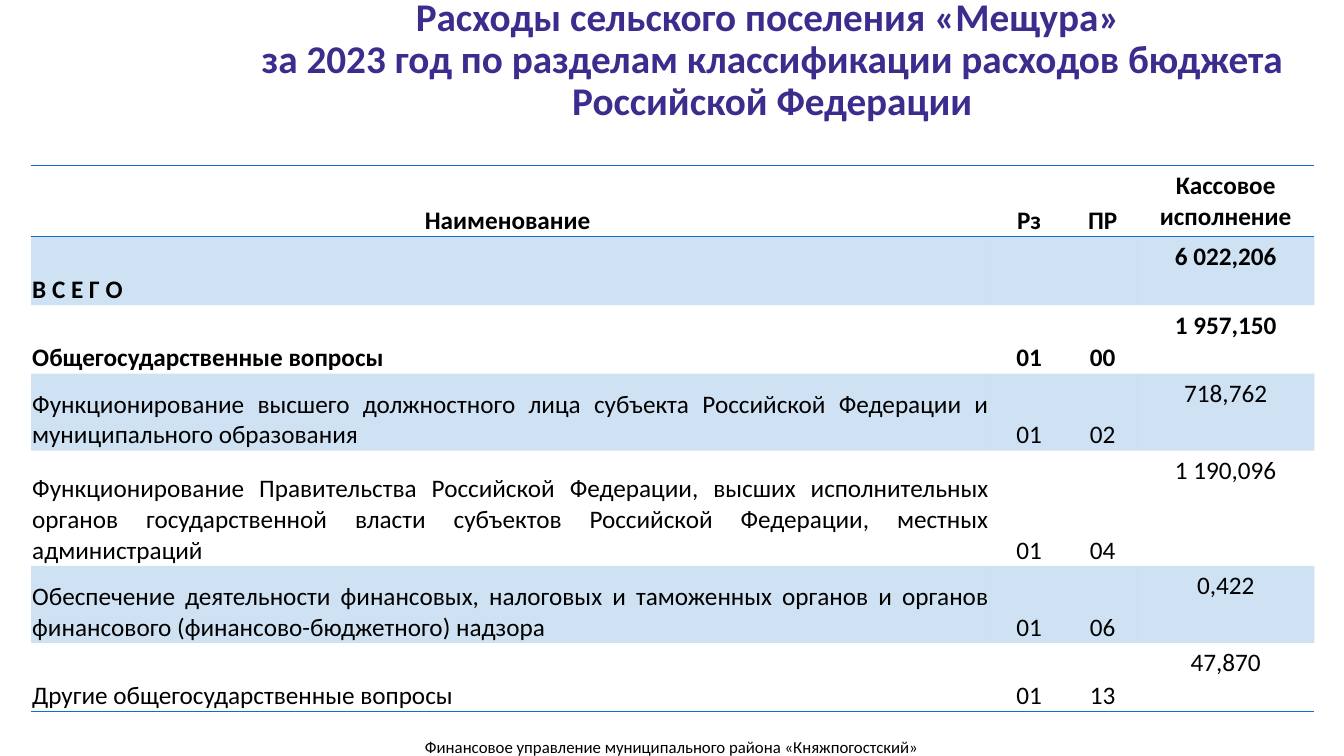
from lxml import etree
from pptx import Presentation
from pptx.dml.color import RGBColor
from pptx.enum.text import MSO_ANCHOR, PP_ALIGN
from pptx.oxml.ns import qn
from pptx.util import Pt

LEFT, CENTER, JUSTIFY = PP_ALIGN.LEFT, PP_ALIGN.CENTER, PP_ALIGN.JUSTIFY
TOP, MIDDLE, BOTTOM = MSO_ANCHOR.TOP, MSO_ANCHOR.MIDDLE, MSO_ANCHOR.BOTTOM

PURPLE = RGBColor(0x3C, 0x2C, 0x8E)
BLUE = RGBColor(0x0F, 0x6F, 0xC6)
BLACK = RGBColor(0, 0, 0)
FONT = "Calibri"
PLAIN_TABLE_STYLE = "{2D5ABB26-0587-4C30-8999-92F81FD0307C}"

TITLE = ("Расходы сельского поселения «Мещура» \v"
         "за 2023 год по разделам классификации расходов бюджета Российской Федерации")
FOOTER = "Финансовое управление муниципального района «Княжпогостский»"
COLUMN_WIDTHS = [684.7, 56.2, 49, 126.7]
ROW_HEIGHTS = [49.7, 49, 49, 55, 82.4, 55, 49]
BOLD_ROWS = 3
EXPENSES = [
    ["Наименование ", "Рз", "ПР", "Кассовое исполнение"],
    ["В С Е Г О", "", "", "6 022,206"],
    ["Общегосударственные вопросы", "01", "00", "1 957,150"],
    ["Функционирование высшего должностного лица субъекта Российской Федерации "
     "и муниципального образования", "01", "02", "718,762"],
    ["Функционирование Правительства Российской Федерации, высших исполнительных "
     "органов государственной власти субъектов Российской Федерации, местных "
     "администраций", "01", "04", "1 190,096"],
    ["Обеспечение деятельности финансовых, налоговых и таможенных органов и органов "
     "финансового (финансово-бюджетного) надзора", "01", "06", "0,422"],
    ["Другие общегосударственные вопросы", "01", "13", "47,870"],
]


def write(frame, text, size=18, color=BLACK, bold=False, align=CENTER, spacing=None):
    para = frame.paragraphs[0]
    para.text = text
    para.alignment = align
    para.line_spacing = spacing
    for span in para.runs:
        span.font.name = FONT
        span.font.size = Pt(size)
        span.font.bold = bold
        span.font.color.rgb = color


def tint(cell, color, percent):
    """Fill a cell with a colour at the given opacity."""
    cell.fill.solid()
    cell.fill.fore_color.rgb = color
    color_node = cell._tc.tcPr.find(qn("a:solidFill"))[0]
    etree.SubElement(color_node, qn("a:alpha"), val=str(percent * 1000))


def add_border(cell, side):
    """Draw one edge of a cell: lnT or lnB."""
    line = etree.Element(qn("a:" + side), w=str(Pt(1)))
    fill = etree.SubElement(line, qn("a:solidFill"))
    etree.SubElement(fill, qn("a:srgbClr"), val=str(BLUE))
    cell._tc.get_or_add_tcPr().insert(0, line)


class ExpenseSlide:
    def __init__(self, deck):
        self.page = deck.slides.add_slide(deck.slide_layouts[6])

    def text_box(self, left, top, width, height, text, **style):
        box = self.page.shapes.add_textbox(Pt(left), Pt(top), Pt(width), Pt(height))
        frame = box.text_frame
        frame.word_wrap = True
        frame.vertical_anchor = MIDDLE
        write(frame, text, **style)

    def table(self, left, top, widths, heights, rows):
        frame = self.page.shapes.add_table(
            len(rows), len(widths), Pt(left), Pt(top), Pt(sum(widths)), Pt(sum(heights)))
        table = frame.table
        table.first_row = table.horz_banding = False
        table._tbl.tblPr.find(qn("a:tableStyleId")).text = PLAIN_TABLE_STYLE
        for column, width in zip(table.columns, widths):
            column.width = Pt(width)
        for row, height in zip(table.rows, heights):
            row.height = Pt(height)
        for i, row in enumerate(rows):
            for j, text in enumerate(row):
                self.table_cell(table.cell(i, j), i, j, text, i == len(rows) - 1)

    def table_cell(self, cell, i, j, text, is_last_row):
        is_amount = j == 3
        cell.vertical_anchor = TOP if is_amount else BOTTOM
        if not is_amount:
            cell.margin_left = cell.margin_right = cell.margin_top = Pt(0.72)
            cell.margin_bottom = 0
        align = CENTER
        if j == 0 and i > 0:
            align = LEFT if i == 1 else JUSTIFY
        write(cell.text_frame, text, bold=i < BOLD_ROWS, align=align)
        if i % 2:
            tint(cell, BLUE, 20)
        else:
            cell.fill.background()
        if i == 0 or is_last_row:
            add_border(cell, "lnB")
        if i == 0:
            add_border(cell, "lnT")


def main():
    deck = Presentation()
    deck.slide_width, deck.slide_height = Pt(960), Pt(540)
    slide = ExpenseSlide(deck)
    slide.text_box(154, 1.4, 795, 84.2, TITLE, size=28, color=PURPLE, bold=True, spacing=0.9)
    slide.table(22.3, 118.5, COLUMN_WIDTHS, ROW_HEIGHTS, EXPENSES)
    slide.text_box(178.6, 519.1, 602.6, 28.8, FOOTER, size=12)
    deck.save("out.pptx")


if __name__ == "__main__":
    main()
